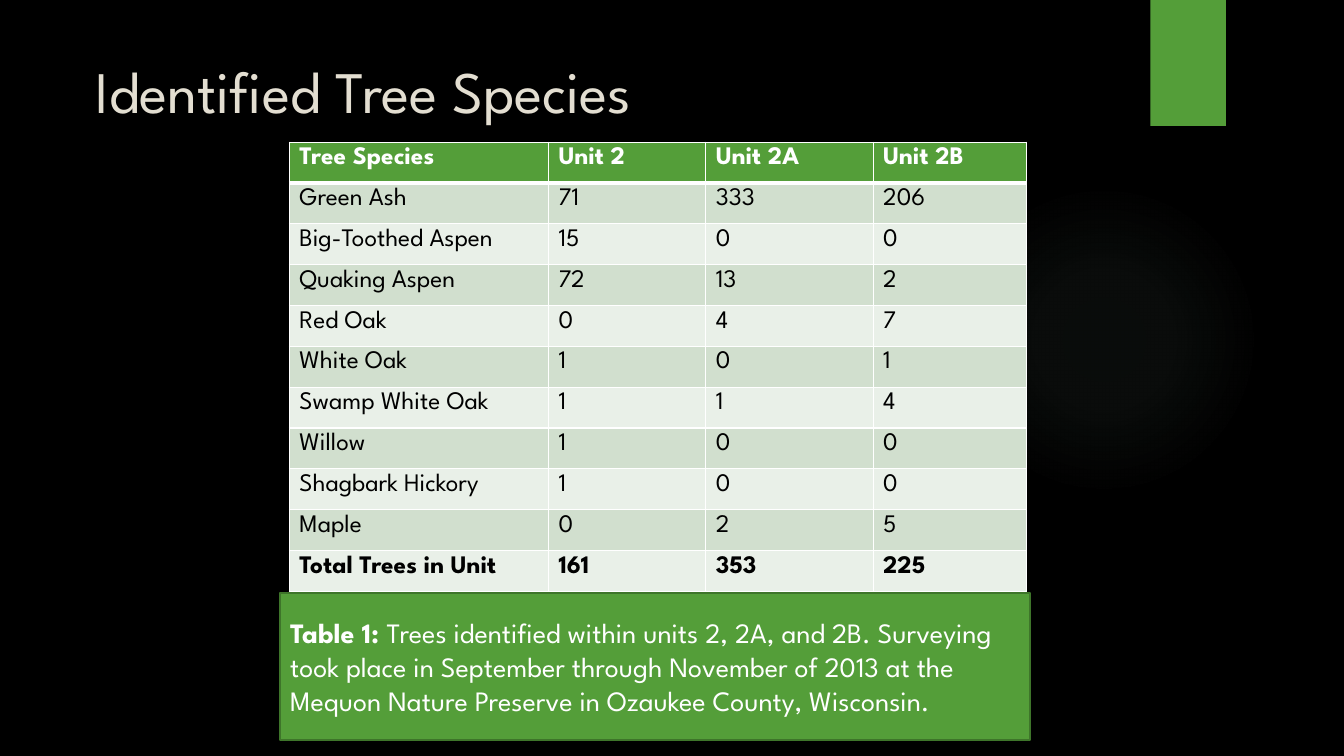
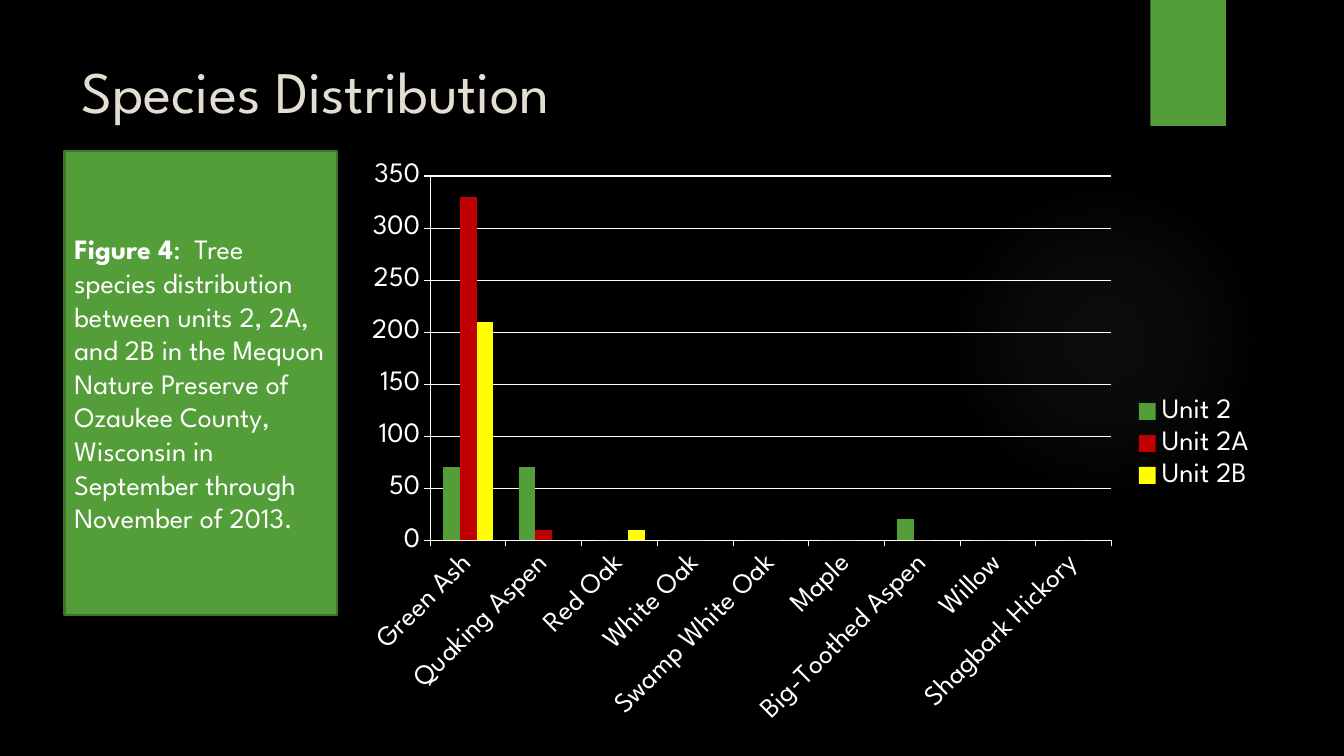
from pptx import Presentation
from pptx.chart.data import CategoryChartData
from pptx.dml.color import RGBColor
from pptx.enum.chart import XL_CHART_TYPE, XL_LEGEND_POSITION, XL_TICK_MARK
from pptx.enum.shapes import MSO_SHAPE
from pptx.enum.text import MSO_ANCHOR, MSO_AUTO_SIZE, PP_ALIGN
from pptx.oxml import parse_xml
from pptx.oxml.ns import nsdecls
from pptx.util import Inches, Pt

BLACK = RGBColor(0x00, 0x00, 0x00)
WHITE = RGBColor(0xFF, 0xFF, 0xFF)
CREAM = RGBColor(0xE3, 0xDE, 0xD1)
GREEN = RGBColor(0x54, 0x9E, 0x39)
DARK_GREEN = RGBColor(0x3E, 0x75, 0x2A)
SAGE = RGBColor(0x87, 0xA8, 0x96)
BAND = RGBColor(0xD1, 0xDF, 0xCE)
PALE_BAND = RGBColor(0xE9, 0xF0, 0xE8)
RED = RGBColor(0xC0, 0x00, 0x00)
YELLOW = RGBColor(0xFF, 0xFF, 0x00)

FONT = "League Spartan"
TITLE = dict(name=FONT, size=Pt(42), bold=False)
CAPTION = dict(name=FONT, size=Pt(20))
CELL = dict(name=FONT, size=Pt(18))
CHART = dict(name=FONT, size=Pt(20), bold=False)

UNITS = ("Unit 2", "Unit 2A", "Unit 2B")
TREES = {
    "Green Ash": (71, 333, 206),
    "Big-Toothed Aspen": (15, 0, 0),
    "Quaking Aspen": (72, 13, 2),
    "Red Oak": (0, 4, 7),
    "White Oak": (1, 0, 1),
    "Swamp White Oak": (1, 1, 4),
    "Willow": (1, 0, 0),
    "Shagbark Hickory": (1, 0, 0),
    "Maple": (0, 2, 5),
}
TOTALS = (161, 353, 225)
CHART_ORDER = ("Green Ash", "Quaking Aspen", "Red Oak", "White Oak",
               "Swamp White Oak", "Maple", "Big-Toothed Aspen", "Willow",
               "Shagbark Hickory")


def style(font, color, formats):
    for key, value in formats.items():
        setattr(font, key, value)
    font.color.rgb = color


def inches(box):
    return [Inches(v) for v in box]


def add_block(s, shape, box, color):
    sp = s.shapes.add_shape(shape, *inches(box))
    sp.shadow.inherit = False
    sp.fill.solid()
    sp.fill.fore_color.rgb = color
    sp.line.fill.background()
    return sp


def add_glow(s, box):
    sp = add_block(s, MSO_SHAPE.OVAL, box, SAGE)
    stops = "".join(
        f'<a:gs pos="{pos * 1000}"><a:srgbClr val="{SAGE}">'
        f'<a:alpha val="{alpha * 1000}"/></a:srgbClr></a:gs>'
        for pos, alpha in ((0, 7), (36, 6), (69, 0)))
    gradient = parse_xml(
        f'<a:gradFill {nsdecls("a")} rotWithShape="1"><a:gsLst>{stops}</a:gsLst>'
        '<a:path path="circle"><a:fillToRect l="50000" t="50000" r="50000" '
        'b="50000"/></a:path></a:gradFill>')
    solid = sp.fill._xPr.solidFill
    solid.getparent().replace(solid, gradient)


def add_titled_slide(prs, title, indent=0.1):
    s = prs.slides.add_slide(prs.slide_layouts[5])
    add_glow(s, (9.41, 1.83, 3.08, 3.08))
    add_block(s, MSO_SHAPE.RECTANGLE, (11.41, 0, 0.75, 1.25), GREEN)
    sp = s.shapes.title
    sp.left, sp.top, sp.width, sp.height = inches((0.71, 0.5, 10.29, 1.53))
    tf = sp.text_frame
    tf.auto_size = MSO_AUTO_SIZE.NONE
    tf.vertical_anchor = MSO_ANCHOR.TOP
    tf.margin_left = Inches(indent)
    p = tf.paragraphs[0]
    p.alignment = PP_ALIGN.LEFT
    p.line_spacing = Pt(50)
    r = p.add_run()
    r.text = title
    style(r.font, CREAM, TITLE)
    return s


def add_caption(s, box, label, text):
    sp = add_block(s, MSO_SHAPE.RECTANGLE, box, GREEN)
    sp.line.color.rgb = DARK_GREEN
    sp.line.width = Pt(1.5)
    tf = sp.text_frame
    tf.word_wrap = True
    tf.vertical_anchor = MSO_ANCHOR.MIDDLE
    p = tf.paragraphs[0]
    p.alignment = PP_ALIGN.LEFT
    p.line_spacing = Pt(24)
    for part, bold in ((label, True), (text, False)):
        r = p.add_run()
        r.text = part
        style(r.font, WHITE, dict(CAPTION, bold=bold))


def add_borders(cell, bottom):
    tc_pr = cell._tc.get_or_add_tcPr()
    edges = (("lnL", 1), ("lnR", 1), ("lnT", 1), ("lnB", bottom))
    for i, (edge, width) in enumerate(edges):
        tc_pr.insert(i, parse_xml(
            f'<a:{edge} {nsdecls("a")} w="{Pt(width)}"><a:solidFill>'
            f'<a:srgbClr val="{WHITE}"/></a:solidFill></a:{edge}>'))


def add_tree_table(s, box, widths):
    rows = [("Tree Species", *UNITS)]
    rows += [(name, *counts) for name, counts in TREES.items()]
    rows.append(("Total Trees in Unit", *TOTALS))
    table = s.shapes.add_table(len(rows), len(widths), *inches(box)).table
    for column, width in zip(table.columns, widths):
        column.width = Inches(width)
    for i, row in enumerate(rows):
        header = i == 0
        fill = GREEN if header else (PALE_BAND, BAND)[i % 2]
        for j, value in enumerate(row):
            cell = table.cell(i, j)
            cell.fill.solid()
            cell.fill.fore_color.rgb = fill
            add_borders(cell, 3 if header else 1)
            p = cell.text_frame.paragraphs[0]
            p.line_spacing = Pt(16.5)
            r = p.add_run()
            r.text = str(value)
            style(r.font, WHITE if header else BLACK,
                  dict(CELL, bold=i in (0, len(rows) - 1)))


def style_axis(axis):
    axis.major_tick_mark = XL_TICK_MARK.OUTSIDE
    axis.minor_tick_mark = XL_TICK_MARK.NONE
    style(axis.tick_labels.font, WHITE, CHART)
    axis.format.line.color.rgb = WHITE
    axis.format.line.width = Pt(0.75)


def add_tree_chart(s, box):
    data = CategoryChartData()
    data.categories = CHART_ORDER
    for i, unit in enumerate(UNITS):
        data.add_series(unit, [round(TREES[name][i], -1) for name in CHART_ORDER])
    chart = s.shapes.add_chart(
        XL_CHART_TYPE.COLUMN_CLUSTERED, *inches(box), data).chart
    style(chart.font, WHITE, CHART)
    chart.has_title = False
    chart.has_legend = True
    chart.legend.position = XL_LEGEND_POSITION.RIGHT
    chart.legend.include_in_layout = False
    style(chart.legend.font, WHITE, CHART)
    plot = chart.plots[0]
    plot.gap_width = 150
    plot.vary_by_categories = False
    for series, color in zip(plot.series, (GREEN, RED, YELLOW)):
        series.invert_if_negative = False
        series.format.fill.solid()
        series.format.fill.fore_color.rgb = color
    for axis in (chart.category_axis, chart.value_axis):
        style_axis(axis)
    label_body = chart.category_axis._element.txPr.bodyPr
    label_body.set("rot", "-2700000")
    label_body.set("vert", "horz")
    axis = chart.value_axis
    axis.minimum_scale, axis.maximum_scale, axis.major_unit = 0, 350, 50
    axis.has_major_gridlines = True
    axis.major_gridlines.format.line.color.rgb = WHITE
    axis.major_gridlines.format.line.width = Pt(0.75)


def build_species_slide(prs):
    s = add_titled_slide(prs, "Identified Tree Species", indent=0.24)
    add_tree_table(s, (2.87, 1.41, 7.31, 4.46), (2.57, 1.56, 1.66, 1.52))
    add_caption(
        s, (2.78, 5.88, 7.44, 1.46), "Table 1: ",
        "Trees identified within units 2, 2A, and 2B. Surveying took place in "
        "September through November of 2013 at the Mequon Nature Preserve in "
        "Ozaukee County, Wisconsin.")


def build_distribution_slide(prs):
    s = add_titled_slide(prs, "Species Distribution")
    add_tree_chart(s, (3.51, 1.5, 9.05, 5.8))
    add_caption(
        s, (0.64, 1.5, 2.7, 4.6), "Figure 4",
        ":  Tree species distribution between units 2, 2A, and 2B in the "
        "Mequon Nature Preserve of Ozaukee County, Wisconsin in September "
        "through November of 2013.")


def main():
    prs = Presentation()
    prs.slide_width, prs.slide_height = inches((13.33, 7.5))
    background = prs.slide_master.background.fill
    background.solid()
    background.fore_color.rgb = BLACK
    build_species_slide(prs)
    build_distribution_slide(prs)
    prs.save("out.pptx")


if __name__ == "__main__":
    main()
